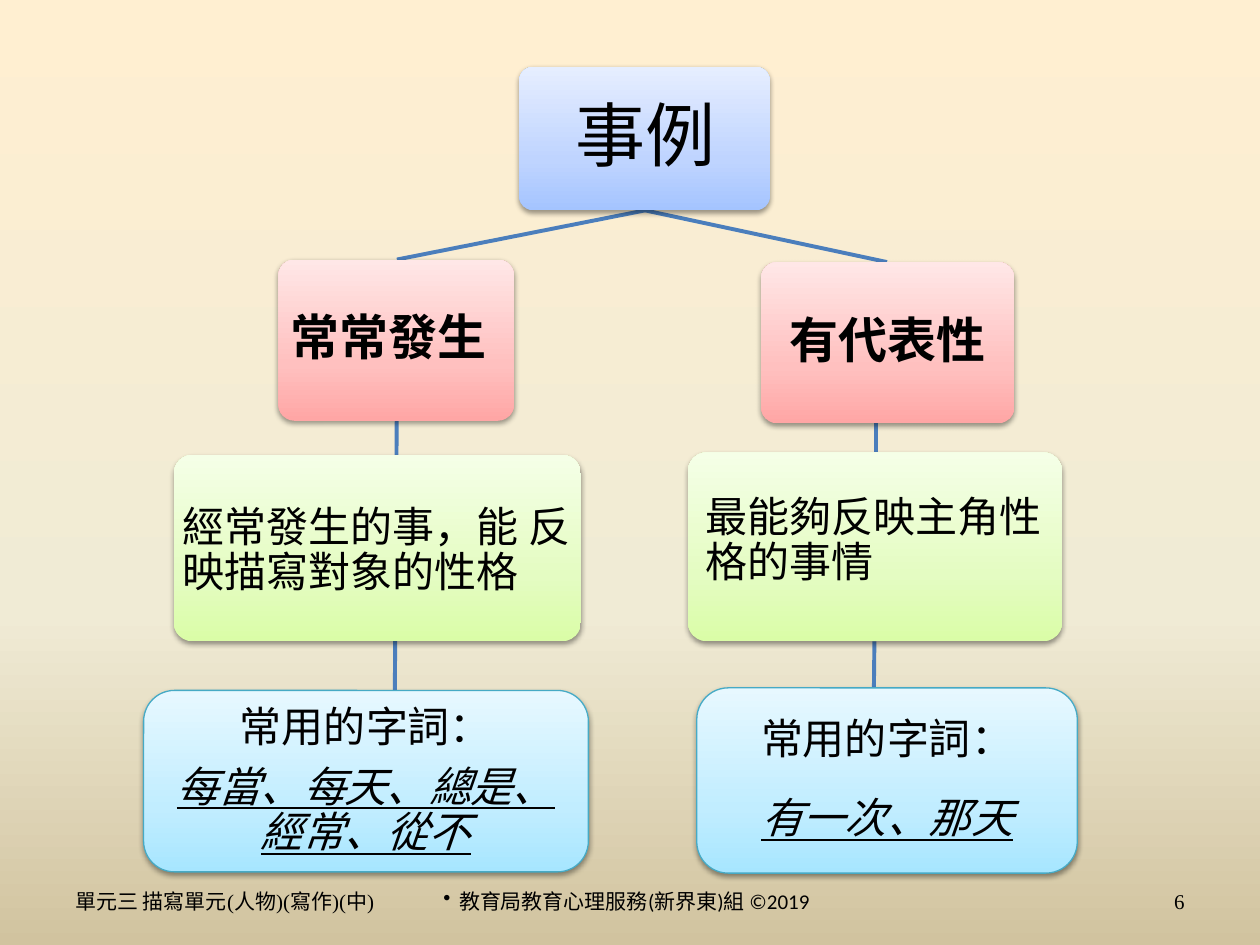
from lxml import etree
from pptx import Presentation
from pptx import util as u
from pptx.dml.color import RGBColor
from pptx.enum import shapes, text
from pptx.oxml import ns

BLUE = ("A4C4FF", "BFD4FF", "E6EEFF")
RED = ("FFA6A5", "FFC0BF", "FFE7E7")
GREEN = ("DAFDA7", "E4FCC2", "F5FFE7")
CYAN = ("A7E6FF", "C1EDFF", "E7F8FF")
LEFT, CENTER, RIGHT = text.PP_ALIGN.LEFT, text.PP_ALIGN.CENTER, text.PP_ALIGN.RIGHT


def color(value):
    return RGBColor.from_string(value)


def add_node(parent, tag, **attributes):
    node = etree.SubElement(parent, ns.qn(tag))
    for name, value in attributes.items():
        node.set(name, str(value))
    return node


class Diagram:
    """Holds the slide and the style shared by its elements."""

    text_color = "000000"
    line_color = "4B7EBC"
    border_color = "46AAC5"

    def __init__(self, slide):
        self.slide = slide

    def gradient(self, fill, element, colors, positions, angle):
        fill.gradient()
        fill.gradient_angle = angle
        stops = element.find(".//" + ns.qn("a:gsLst"))
        for stop in list(stops):
            stops.remove(stop)
        for value, position in zip(colors, positions):
            stop = add_node(stops, "a:gs", pos=position * 1000)
            add_node(stop, "a:srgbClr", val=value)

    def background(self, colors, positions):
        self.gradient(self.slide.background.fill, self.slide.element, colors, positions, 270)

    def line(self, start, end):
        points = [u.Inches(value) for value in start + end]
        connector = self.slide.shapes.add_connector(shapes.MSO_CONNECTOR.STRAIGHT, *points)
        connector.line.color.rgb = color(self.line_color)
        connector.line.width = u.Pt(2.25)
        add_node(connector.element.spPr, "a:effectLst")

    def box(self, place, colors, corner=0.1, border=False):
        shape = self.slide.shapes.add_shape(
            shapes.MSO_SHAPE.ROUNDED_RECTANGLE, *map(u.Inches, place))
        shape.adjustments[0] = corner
        self.gradient(shape.fill, shape.element, colors, (0, 35, 100), 90)
        if border:
            shape.line.color.rgb = color(self.border_color)
            shape.line.width = u.Pt(0.75)
        else:
            shape.line.fill.background()
        self.shadow(shape)
        return shape

    def shadow(self, shape):
        shape.shadow.inherit = False
        effects = shape.element.spPr.find(ns.qn("a:effectLst"))
        outer = add_node(effects, "a:outerShdw", blurRad=u.Pt(3.1), dist=u.Pt(1.6),
                         dir=90 * 60000, rotWithShape=0)
        black = add_node(outer, "a:srgbClr", val="000000")
        add_node(black, "a:alpha", val=38000)

    def paragraph(self, paragraph, words, size, font="Lato", align=CENTER,
                  spacing=0.9, after=None, **style):
        paragraph.alignment = align
        paragraph.line_spacing = spacing
        paragraph.space_after = u.Pt(size * 0.35 if after is None else after)
        run = paragraph.add_run()
        run.text = words
        run.font.size = u.Pt(size)
        run.font.name = font
        run.font.color.rgb = color(self.text_color)
        for name, value in style.items():
            setattr(run.font, name, value)

    def label(self, place, words, size, inset=(0.1, 0.05), **style):
        frame = self.slide.shapes.add_textbox(*map(u.Inches, place)).text_frame
        frame.word_wrap = True
        frame.vertical_anchor = text.MSO_ANCHOR.MIDDLE
        frame.margin_left = frame.margin_right = u.Inches(inset[0])
        frame.margin_top = frame.margin_bottom = u.Inches(inset[1])
        self.paragraph(frame.paragraphs[0], words, size, **style)
        return frame.paragraphs[0]

    def footer(self, left, width, words, font, align):
        return self.label((left, 6.95, width, 0.4), words, 12, font=font,
                          align=align, spacing=1.0, after=0)

    def bullet(self, paragraph):
        properties = paragraph._p.get_or_add_pPr()
        properties.set("marL", "0")
        properties.set("indent", str(-u.Inches(0.2)))
        add_node(properties, "a:buChar", char="•")

    def word_box(self, place, words, gap):
        """Box that lists common words under a heading."""
        frame = self.box(place, CYAN, corner=0.17, border=True).text_frame
        frame.word_wrap = True
        frame.vertical_anchor = text.MSO_ANCHOR.MIDDLE
        self.paragraph(frame.paragraphs[0], "常用的字詞：", 24, after=gap)
        self.paragraph(frame.add_paragraph(), words, 24, italic=True, underline=True)


def main():
    presentation = Presentation()
    presentation.slide_width, presentation.slide_height = u.Inches(10), u.Inches(7.5)
    diagram = Diagram(presentation.slides.add_slide(presentation.slide_layouts[6]))
    diagram.background(("FFEFD1", "F0EBD5", "D1C39F"), (0, 65, 100))

    root = (5.12, 1.67)
    for start, end in (
        (root, (7.04, 2.08)),
        (root, (3.15, 2.06)),
        ((3.15, 3.13), (3.13, 6.01)),
        ((6.95, 3.3), (6.95, 3.75)),
        ((6.94, 5.09), (6.93, 6.01)),
    ):
        diagram.line(start, end)

    diagram.word_box((1.14, 5.48, 3.53, 1.44), "每當、每天、總是、經常、從不", 8.4)
    diagram.word_box((5.53, 5.46, 3.02, 1.47), "有一次、那天", 19)

    diagram.footer(0.5, 2.85, "單元三 描寫單元(人物)(寫作)(中)", "Times New Roman", LEFT)
    center = diagram.footer(3.42, 3.17, "教育局教育心理服務(新界東)組 ©2019", "Calibri", CENTER)
    center.space_before = u.Pt(2.4)
    diagram.bullet(center)
    diagram.footer(7.17, 2.33, "6", "Times New Roman", RIGHT)

    diagram.box((4.12, 0.53, 1.99, 1.14), BLUE)
    diagram.label((4.16, 0.56, 1.92, 1.08), "事例", 40, (0.12, 0.12), font="Noto Sans CJK SC")

    for box, place, words in (
        ((2.21, 2.06, 1.87, 1.28), (2.01, 2.09, 2.15, 1.21), "常常發生"),
        ((6.04, 2.08, 2.01, 1.28), (6.08, 2.12, 1.93, 1.2), "有代表性"),
    ):
        diagram.box(box, RED)
        diagram.label(place, words, 28, (0.1, 0.1), bold=True)

    for box, place, words in (
        ((1.38, 3.61, 3.23, 1.48), (1.38, 3.66, 3.3, 1.43), "經常發生的事，能 反映描寫對象的性格"),
        ((5.46, 3.59, 2.97, 1.5), (5.53, 3.77, 2.82, 1.05), "最能夠反映主角性格的事情"),
    ):
        diagram.box(box, GREEN)
        diagram.label(place, words, 24, (0.07, 0.07), align=LEFT)

    presentation.save("out.pptx")


if __name__ == "__main__":
    main()
